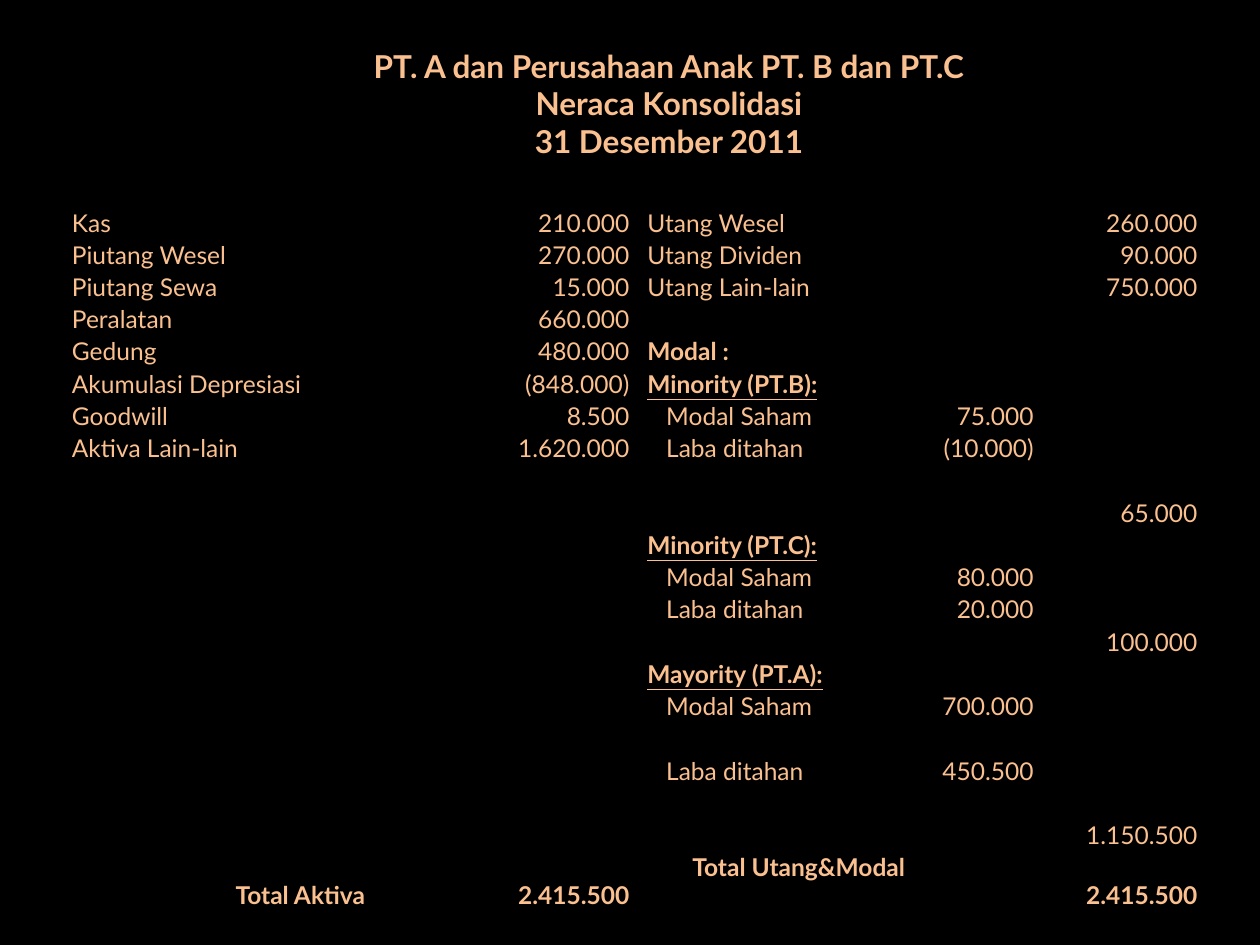
"""Build the consolidated balance sheet slide."""
from dataclasses import dataclass

from lxml import etree
from pptx import Presentation
from pptx.dml.color import RGBColor
from pptx.enum.shapes import MSO_SHAPE
from pptx.enum.text import MSO_ANCHOR, PP_ALIGN
from pptx.oxml.ns import qn
from pptx.util import Cm, Pt

RECTANGLE = MSO_SHAPE.RECTANGLE
TOP = MSO_ANCHOR.TOP
CENTER, RIGHT, JUSTIFY = PP_ALIGN.CENTER, PP_ALIGN.RIGHT, PP_ALIGN.JUSTIFY
PLAIN_TABLE_STYLE = "{2D5ABB26-0587-4C30-8999-92F81FD0307C}"

TITLE = "PT. A dan Perusahaan Anak PT. B dan PT.C\nNeraca Konsolidasi\n31 Desember 2011"
ASSET, ASSET_GAP, ASSET_AMOUNT, CLAIM, DETAIL, CLAIM_AMOUNT = range(6)
COLUMN_WIDTHS = (6.27, 1.75, 3.58, 5.56, 2.59, 3.3)
ROWS = [
    ("Kas", "", "210.000", "Utang Wesel", "", "260.000"),
    ("Piutang Wesel", "", "270.000", "Utang Dividen", "", "90.000"),
    ("Piutang Sewa", "", "15.000", "Utang Lain-lain", "", "750.000"),
    ("Peralatan", "", "660.000", "", "", ""),
    ("Gedung", "", "480.000", "Modal :", "", ""),
    ("Akumulasi Depresiasi", "", "(848.000)", "Minority (PT.B):", "", ""),
    ("Goodwill", "", "8.500", "Modal Saham", "75.000", ""),
    ("Aktiva Lain-lain", "", "1.620.000", "Laba ditahan", "(10.000)", ""),
    ("", "", "", "", "", "65.000"),
    ("", "", "", "Minority (PT.C):", "", ""),
    ("", "", "", "Modal Saham", "80.000", ""),
    ("", "", "", "Laba ditahan", "20.000", ""),
    ("", "", "", "", "", "100.000"),
    ("", "", "", "Mayority (PT.A):", "", ""),
    ("", "", "", "Modal Saham", "700.000", ""),
    ("", "", "", "Laba ditahan", "450.500", ""),
    ("", "", "", "", "", "1.150.500"),
    ("Total Aktiva", "", "2.415.500", "Total Utang&Modal", "", "2.415.500"),
]
TOTAL_ROW = len(ROWS) - 1
DOUBLE_ROWS = (7, 14, 15)
ROW_HEIGHT, TOTAL_HEIGHT = 0.65, 1.88
CELL_MARGIN, DETAIL_INDENT, TOTAL_DROP = 0.18, 0.38, 0.55


@dataclass(frozen=True)
class Theme:
    """Colours, font and type sizes of the slide."""

    background: RGBColor = RGBColor(0x00, 0x00, 0x00)
    text: RGBColor = RGBColor(0xFA, 0xC0, 0x90)
    font: str = "Lato"
    title_size: int = 18
    body_size: int = 14


class SlideBuilder:
    """Draw styled elements on the current slide."""

    def __init__(self, slide, theme):
        self.slide = slide
        self.theme = theme

    def format_paragraph(self, paragraph, size, alignment, bold=False, underline=False):
        """Align a paragraph and style its runs."""
        paragraph.alignment = alignment
        for run in paragraph.runs:
            run.font.name = self.theme.font
            run.font.size = Pt(size)
            run.font.color.rgb = self.theme.text
            run.font.bold = bold
            run.font.underline = underline

    def backdrop(self, width, height):
        """Add the dark panel behind everything."""
        shape = self.slide.shapes.add_shape(RECTANGLE, 0, 0, Cm(width), Cm(height))
        shape.shadow.inherit = False
        shape.fill.solid()
        shape.fill.fore_color.rgb = self.theme.background
        shape.line.color.rgb = self.theme.background
        shape.line.width = Pt(2)

    def title(self, text, left, top, width, height):
        """Add the centred bold heading."""
        shape = self.slide.shapes.add_textbox(Cm(left), Cm(top), Cm(width), Cm(height))
        text_frame = shape.text_frame
        text_frame.word_wrap = True
        text_frame.vertical_anchor = TOP
        text_frame.margin_left = text_frame.margin_right = 0
        text_frame.margin_top = text_frame.margin_bottom = 0
        text_frame.text = text
        for paragraph in text_frame.paragraphs:
            self.format_paragraph(paragraph, self.theme.title_size, CENTER, bold=True)

    def cell(self, cell, text, alignment, bold, underline, indent, drop):
        """Fill one table cell."""
        cell.fill.background()
        cell.margin_left = Cm(CELL_MARGIN + indent)
        cell.margin_right = Cm(CELL_MARGIN)
        cell.margin_top = Cm(drop)
        cell.margin_bottom = 0
        paragraph = cell.text_frame.paragraphs[0]
        paragraph.text = text
        size = self.theme.body_size
        self.format_paragraph(paragraph, size, alignment, bold, underline)
        if not text:
            etree.SubElement(paragraph._p, qn("a:endParaRPr"), sz=str(size * 100))

    def balance_sheet(self, rows, left, top):
        """Add the two-sided balance sheet table."""
        heights = [ROW_HEIGHT * (2 if index in DOUBLE_ROWS else 1) for index in range(TOTAL_ROW)]
        heights.append(TOTAL_HEIGHT)
        table = self.slide.shapes.add_table(
            len(rows), len(COLUMN_WIDTHS), Cm(left), Cm(top),
            Cm(sum(COLUMN_WIDTHS)), Cm(sum(heights)),
        ).table
        table.first_row = table.horz_banding = False
        table._tbl.tblPr.find(qn("a:tableStyleId")).text = PLAIN_TABLE_STYLE
        for column, width in zip(table.columns, COLUMN_WIDTHS):
            column.width = Cm(width)
        for row_index, (values, height) in enumerate(zip(rows, heights)):
            table.rows[row_index].height = Cm(height)
            is_total = row_index == TOTAL_ROW
            for column_index, text in enumerate(values):
                is_label = column_index in (ASSET, CLAIM)
                is_heading = text.endswith(":")
                is_detail = column_index == CLAIM and values[DETAIL]
                self.cell(
                    table.cell(row_index, column_index),
                    text,
                    JUSTIFY if is_label and not is_total else RIGHT,
                    bold=is_total or is_heading,
                    underline=is_heading and "(" in text,
                    indent=DETAIL_INDENT if is_detail else 0,
                    drop=TOTAL_DROP if is_total and text and column_index != CLAIM else 0,
                )


def main():
    """Create the presentation and save it."""
    presentation = Presentation()
    presentation.slide_width = Cm(25.4)
    presentation.slide_height = Cm(19.05)
    slide = presentation.slides.add_slide(presentation.slide_layouts[6])
    builder = SlideBuilder(slide, Theme())
    builder.backdrop(25.4, 19.69)
    builder.balance_sheet(ROWS, 1.27, 4.19)
    builder.title(TITLE, 6.65, 0.94, 13.67, 3.07)
    presentation.save("out.pptx")


if __name__ == "__main__":
    main()
